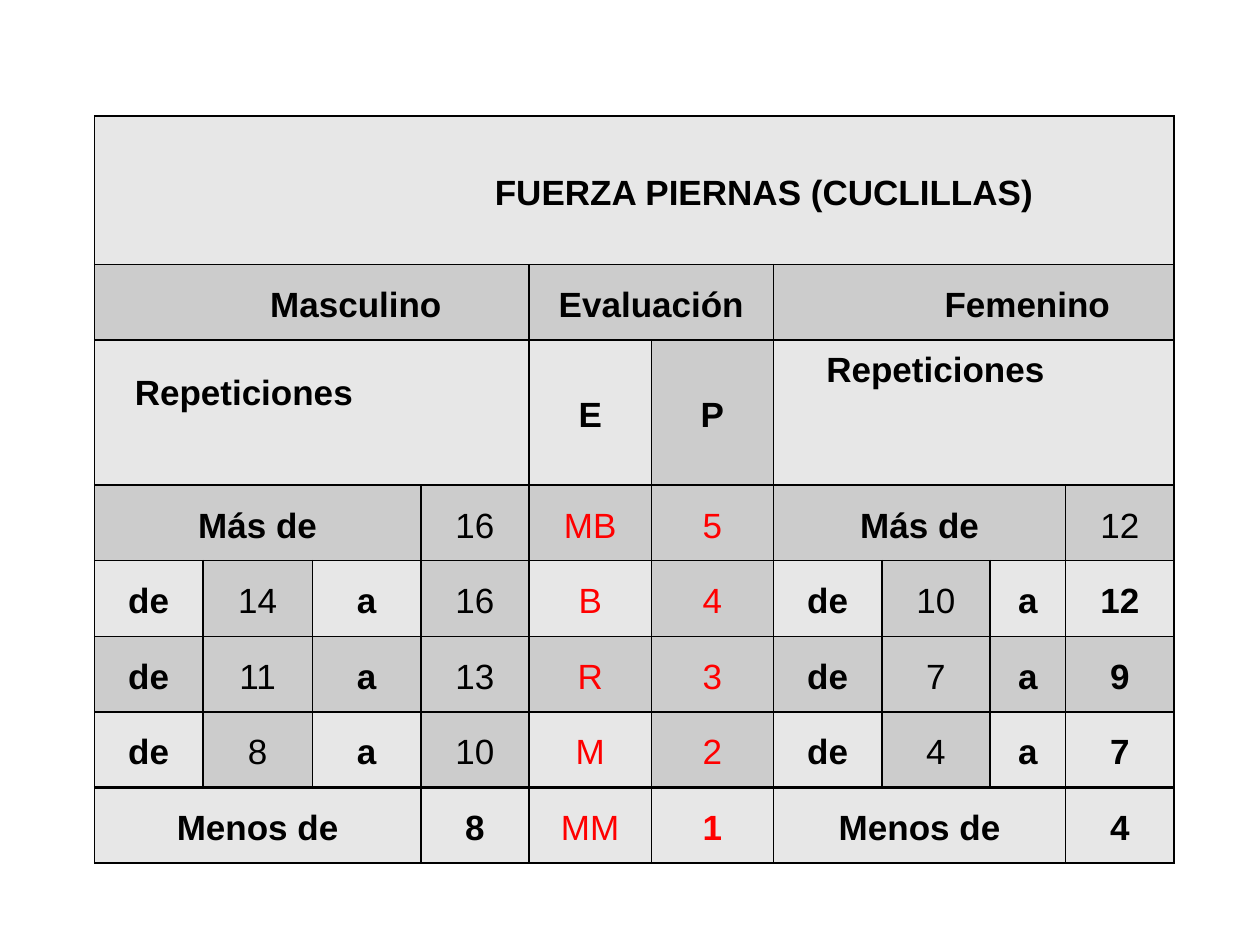
import pptx
import pptx.util
import pptx.dml.color
import pptx.enum.text
import lxml.etree
from pptx.util import Inches
from pptx.oxml.ns import qn

WIDTHS = [0.86, 0.87, 0.86, 0.86, 0.97, 0.97, 0.86, 0.86, 0.6, 0.86]
HEIGHTS = [1.18, 0.6, 1.15] + [0.6] * 5
ROWS = [
    ["FUERZA PIERNAS (CUCLILLAS)"] + [None] * 9,
    ["Masculino", None, None, None, "Evaluación", None, "Femenino", None, None, None],
    ["Repeticiones", None, None, None, "E", "P", "Repeticiones", None, None, None],
    ["Más de", None, None, "16", "MB", "5", "Más de", None, None, "12"],
    ["de", "14", "a", "16", "B", "4", "de", "10", "a", "12"],
    ["de", "11", "a", "13", "R", "3", "de", "7", "a", "9"],
    ["de", "8", "a", "10", "M", "2", "de", "4", "a", "7"],
    ["Menos de", None, None, "8", "MM", "1", "Menos de", None, None, "4"],
]
INDENTS = {(0, 0): 2.06, (1, 0): 0.7, (1, 6): 0.85, (2, 0): 0.25, (2, 6): 0.35}
LIFTS = {(2, 0): 0.36, (2, 6): 0.72}
LAST = len(ROWS) - 1


def color(code):
    return pptx.dml.color.RGBColor.from_string(code)


def write(frame, text, font="Arial", size=20, bold=False, ink="000000",
          align="CENTER", indent=0):
    para = frame.paragraphs[0]
    para.alignment = getattr(pptx.enum.text.PP_ALIGN, align)
    para.line_spacing = 1.15
    if indent:
        props = para._p.get_or_add_pPr()
        props.set("marL", str(int(Inches(indent))))
        props.set("indent", "0")
    run = para.add_run()
    run.text = text
    run.font.name = font
    run.font.size = pptx.util.Pt(size)
    run.font.bold = bold
    run.font.color.rgb = color(ink)


class Deck:
    light, dark, ink, mark = "E7E7E7", "CCCCCC", "000000", "FF0000"
    pad = 0.07

    def __init__(self):
        self.prs = pptx.Presentation()
        self.prs.slide_width = Inches(10)
        self.prs.slide_height = Inches(7.5)
        self.slide = self.prs.slides.add_slide(self.prs.slide_layouts[6])

    def border(self, cell, row):
        props = cell._tc.get_or_add_tcPr()
        for side in "LRTB":
            thick = (row, side) in ((LAST, "T"), (LAST - 1, "B"))
            width = pptx.util.Pt(2 if thick else 1)
            line = lxml.etree.SubElement(props, qn("a:ln" + side), w=str(int(width)))
            fill = lxml.etree.SubElement(line, qn("a:solidFill"))
            lxml.etree.SubElement(fill, qn("a:srgbClr"), val=self.ink)

    def cell(self, cell, row, col, text):
        self.border(cell, row)
        shade = row < LAST and (row % 2 or col in (1, 3, 5, 7))
        cell.fill.solid()
        cell.fill.fore_color.rgb = color(self.dark if shade else self.light)
        if text is None:
            return
        spot = (row, col)
        cell.vertical_anchor = pptx.enum.text.MSO_ANCHOR.MIDDLE
        cell.margin_left = cell.margin_right = Inches(self.pad)
        cell.margin_top = 0
        cell.margin_bottom = Inches(LIFTS.get(spot, 0))
        label = row < 3 or col in (0, 2, 6, 8)
        strong = label or (col == 9 and row > 3) or (row == LAST and col != 4)
        write(cell.text_frame, text, bold=strong,
              ink=self.mark if row > 2 and col in (4, 5) else self.ink,
              align="LEFT" if spot in LIFTS else "CENTER",
              indent=INDENTS.get(spot, 0))

    def table(self, rows, left, top):
        frame = self.slide.shapes.add_table(
            len(rows), len(WIDTHS), Inches(left), Inches(top),
            Inches(sum(WIDTHS)), Inches(sum(HEIGHTS)))
        table = frame.table
        table.first_row = table.horz_banding = False
        for col, width in zip(table.columns, WIDTHS):
            col.width = Inches(width)
        for row, height in zip(table.rows, HEIGHTS):
            row.height = Inches(height)
        for r, row in enumerate(rows):
            starts = [c for c, text in enumerate(row) if text is not None]
            for c, text in enumerate(row):
                self.cell(table.cell(r, c), r, c, text)
            for start, end in zip(starts, starts[1:] + [len(row)]):
                if end - start > 1:
                    table.cell(r, start).merge(table.cell(r, end - 1))


def main():
    deck = Deck()
    deck.table(ROWS, 0.75, 0.92)
    deck.prs.save("out.pptx")


if __name__ == "__main__":
    main()
